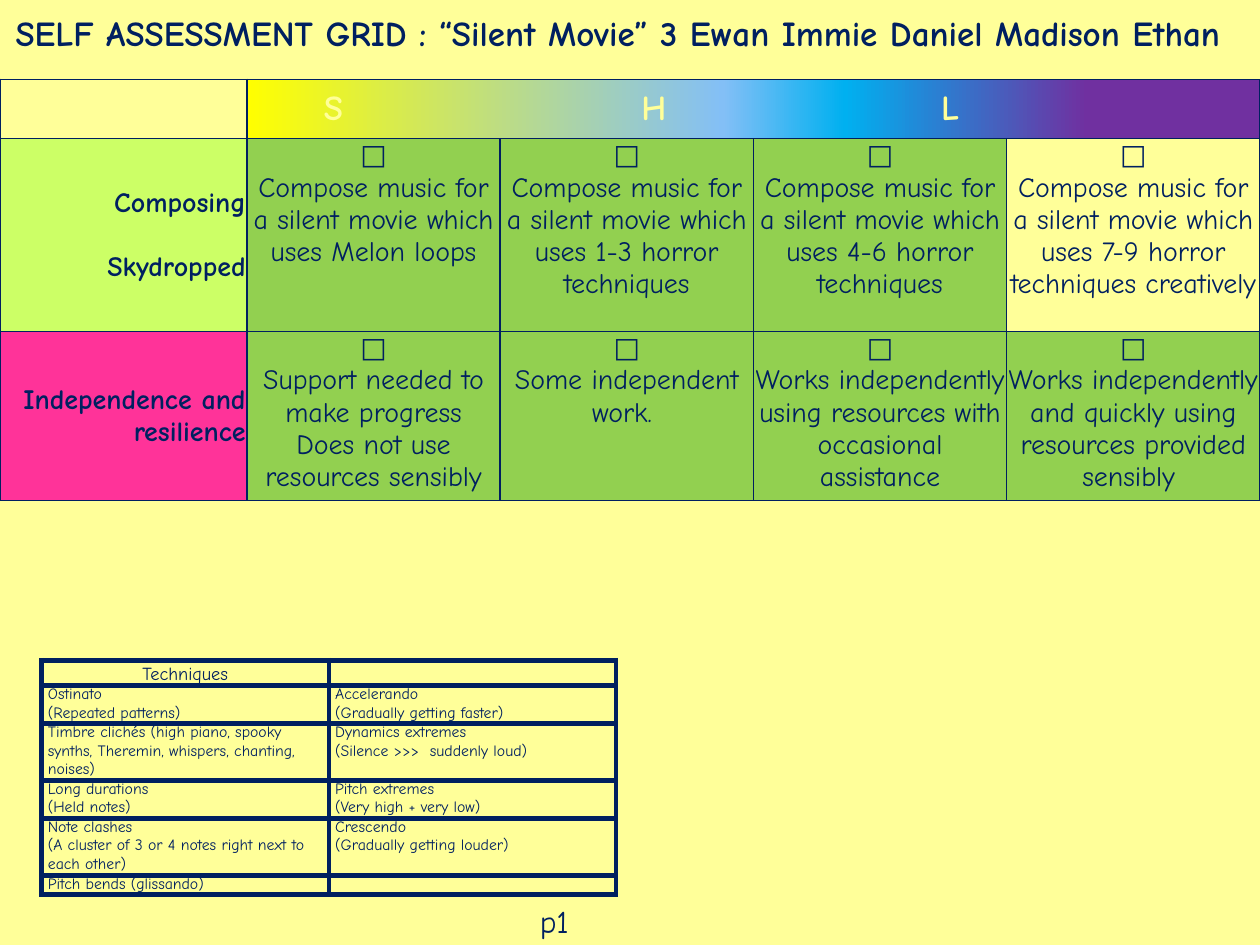
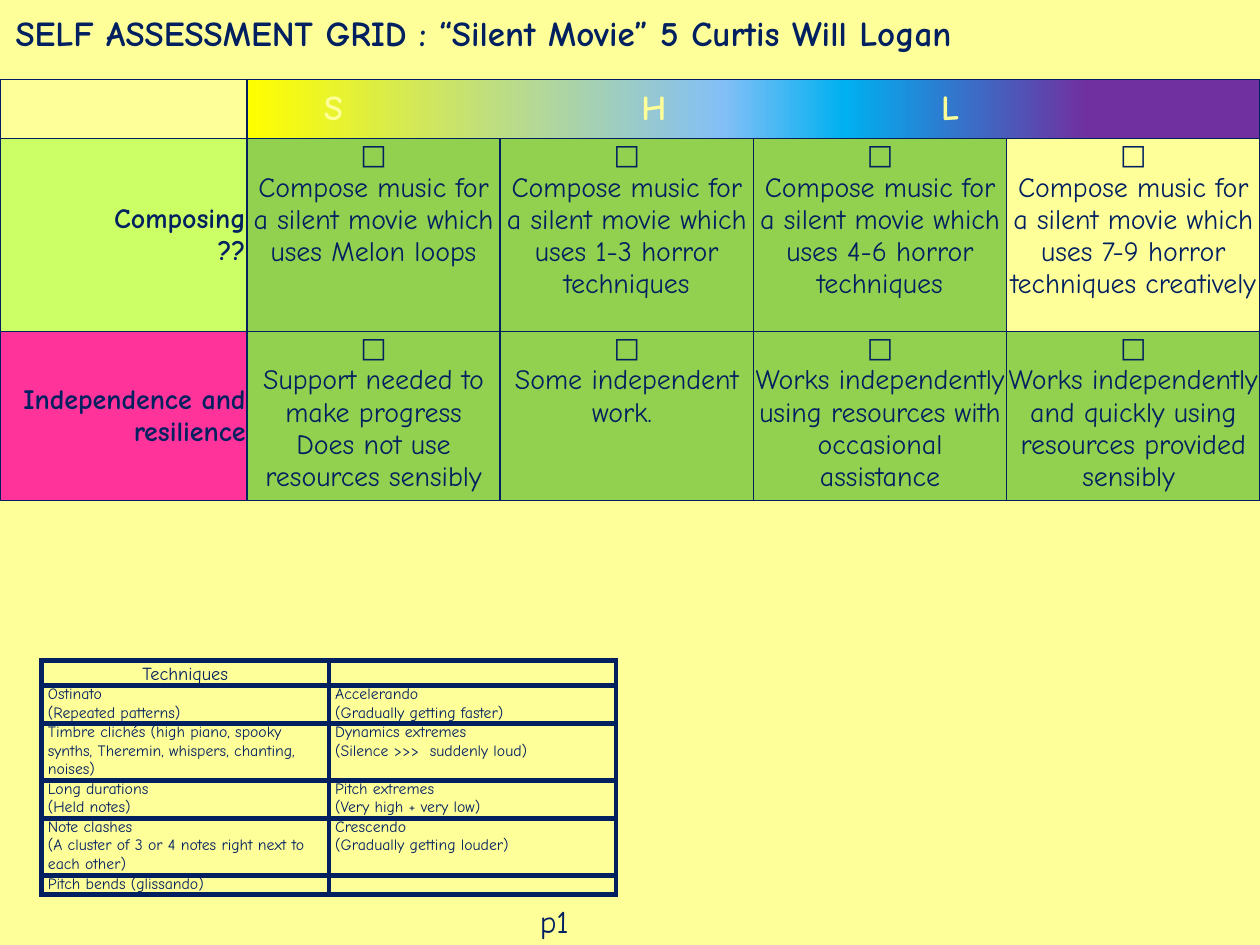
from dataclasses import dataclass

from lxml.etree import SubElement
from pptx import Presentation
from pptx.dml.color import RGBColor
from pptx.enum.shapes import MSO_SHAPE
from pptx.enum.text import MSO_ANCHOR, PP_ALIGN
from pptx.oxml.ns import qn
from pptx.util import Inches, Pt

FONT = "Comic Neue"
COLOURS = {
    "page": "FFFF99",
    "ink": "002060",
    "achieved": "92D050",
    "composing": "CCFF66",
    "independence": "FF3399",
}
LEVEL_GRADIENT = {0: "FFFF00", 47: "83BFF6", 59: "00B0F0", 83: "7030A0"}
LEVEL_TABS = {"S": 0.6, "H": 3.12, "L": 5.5}

COMPOSING_TASKS = [
    "uses Melon loops",
    "uses 1-3 horror techniques",
    "uses 4-6 horror techniques",
    "uses 7-9 horror techniques creatively",
]
INDEPENDENCE_LEVELS = [
    ["Support needed to make progress", "Does not use resources sensibly"],
    ["Some independent work. "],
    ["Works independently using resources with occasional assistance"],
    ["Works independently and quickly using resources provided sensibly "],
]


@dataclass(frozen=True)
class TechniqueRow:
    left: list[str]
    right: list[str]


TECHNIQUES = [
    TechniqueRow(["Ostinato", "(Repeated patterns)"],
                 ["Accelerando", "(Gradually getting faster)"]),
    TechniqueRow(["Timbre clichés (high piano, spooky synths, Theremin, whispers, "
                  "chanting, noises)"],
                 ["Dynamics extremes", "(Silence >>>  suddenly loud)"]),
    TechniqueRow(["Long durations", "(Held notes)"],
                 ["Pitch extremes", "(Very high + very low)"]),
    TechniqueRow(["Note clashes",
                  "(A cluster of 3 or 4 notes right next to each other)"],
                 ["Crescendo", "(Gradually getting louder)"]),
    TechniqueRow(["Pitch bends (glissando)"], []),
]


@dataclass(frozen=True)
class Assessment:
    group: str
    composing_label: list[str]
    label_gap: float = 0


ASSESSMENTS = [
    Assessment("3 Ewan Immie Daniel Madison Ethan", ["Composing", "Skydropped"], 18.5),
    Assessment("5 Curtis Will Logan", ["Composing", "??"]),
]


def write(frame, lines: list[str], *, size: float, bold: bool = False,
          colour: str = COLOURS["ink"], align=PP_ALIGN.LEFT,
          spacing: float = 1.0, gap: float = 0) -> None:
    """Write one paragraph per line, with gap points between paragraphs."""
    if not lines:
        SubElement(frame.paragraphs[0]._p, qn("a:endParaRPr"), sz=str(int(size * 100)))
    for index, line in enumerate(lines):
        para = frame.add_paragraph() if index else frame.paragraphs[0]
        para.alignment = align
        para.line_spacing = spacing
        para.space_before = Pt(gap if index else 0)
        span = para.add_run()
        span.text = line
        span.font.name = FONT
        span.font.size = Pt(size)
        span.font.bold = bold
        span.font.color.rgb = RGBColor.from_string(colour)


def add_colour(parent, colour: str) -> None:
    SubElement(parent, qn("a:srgbClr"), val=colour)


def add_grid(page, left: float, top: float, height: float, widths: list[float],
             row_heights: list[float], border: float, insets: tuple):
    """Add an unfilled table whose rows grow from their least heights to fit the text."""
    frame = page.shapes.add_table(len(row_heights), len(widths), Inches(left),
                                  Inches(top), Inches(sum(widths)), Inches(height))
    grid = frame.table
    grid.first_row = grid.horz_banding = False
    for column, width in zip(grid.columns, widths):
        column.width = Inches(width)
    for row, row_height in zip(grid.rows, row_heights):
        row.height = Inches(row_height)
    frame.height = Inches(height)
    for cell in grid.iter_cells():
        (cell.margin_left, cell.margin_top,
         cell.margin_right, cell.margin_bottom) = map(Inches, insets)
        properties = cell._tc.get_or_add_tcPr()
        for side in ("lnL", "lnR", "lnT", "lnB"):
            line = SubElement(properties, qn(f"a:{side}"), w=str(Pt(border)))
            add_colour(SubElement(line, qn("a:solidFill")), COLOURS["ink"])
        cell.fill.background()
    return grid


def fill_cell(cell, colour: str) -> None:
    cell.fill.solid()
    cell.fill.fore_color.rgb = RGBColor.from_string(colour)


def fill_level_band(cell) -> None:
    cell.fill.gradient()
    cell.fill.gradient_angle = 0
    stops = cell._tc.tcPr.find(qn("a:gradFill")).find(qn("a:gsLst"))
    for stop in list(stops):
        stops.remove(stop)
    for percent, colour in LEVEL_GRADIENT.items():
        add_colour(SubElement(stops, qn("a:gs"), pos=str(percent * 1000)), colour)


def add_level_header(grid) -> None:
    write(grid.cell(0, 0).text_frame, [], size=20)
    band = grid.cell(0, 1)
    band.merge(grid.cell(0, 4))
    fill_level_band(band)
    band.vertical_anchor = MSO_ANCHOR.MIDDLE
    write(band.text_frame, ["".join(f"\t{level}" for level in LEVEL_TABS)],
          size=20, bold=True, colour=COLOURS["page"])
    tabs = SubElement(band.text_frame.paragraphs[0]._p.pPr, qn("a:tabLst"))
    for position in LEVEL_TABS.values():
        SubElement(tabs, qn("a:tab"), pos=str(Inches(position)), algn="l")


def add_criterion(grid, row: int, label: list[str], colour: str,
                  levels: list[list[str]], achieved: int, gap: float = 0) -> None:
    """Fill one row: a label, then tick-box cells, the first few marked achieved."""
    heading = grid.cell(row, 0)
    fill_cell(heading, colour)
    heading.vertical_anchor = MSO_ANCHOR.MIDDLE
    write(heading.text_frame, label, size=16, bold=True, align=PP_ALIGN.RIGHT, gap=gap)
    for column, level in enumerate(levels, start=1):
        cell = grid.cell(row, column)
        write(cell.text_frame, ["□", *level], size=16, align=PP_ALIGN.CENTER)
        if column <= achieved:
            fill_cell(cell, COLOURS["achieved"])


def add_assessment_grid(page, assessment: Assessment) -> None:
    grid = add_grid(page, 0, 0.63, 3.96, [1.96] + [2.01] * 4, [0.47, 1.53, 1.21],
                    border=1, insets=(0.01, 0.01, 0.01, 0))
    add_level_header(grid)
    tasks = [[f"Compose music for a silent movie which {task}"] for task in COMPOSING_TASKS]
    add_criterion(grid, 1, assessment.composing_label, COLOURS["composing"], tasks,
                  achieved=3, gap=assessment.label_gap)
    add_criterion(grid, 2, ["Independence and resilience"], COLOURS["independence"],
                  INDEPENDENCE_LEVELS, achieved=4)


def add_techniques(page) -> None:
    grid = add_grid(page, 0.33, 5.24, 1.84, [2.28, 2.28], [0] * (len(TECHNIQUES) + 1),
                    border=3, insets=(0.05, 0, 0.05, 0))
    heading = grid.cell(0, 0)
    heading.vertical_anchor = MSO_ANCHOR.MIDDLE
    write(heading.text_frame, ["Techniques"], size=10.5,
          align=PP_ALIGN.CENTER, spacing=1.15)
    write(grid.cell(0, 1).text_frame, [], size=9)
    for index, row in enumerate(TECHNIQUES, start=1):
        for column, lines in enumerate((row.left, row.right)):
            write(grid.cell(index, column).text_frame, lines, size=9)


def add_title(page, group: str) -> None:
    box = page.shapes.add_shape(MSO_SHAPE.ROUNDED_RECTANGLE, 0, 0,
                                Inches(10), Inches(0.52))
    box.shadow.inherit = False
    box.fill.background()
    box.line.fill.background()
    box.text_frame.word_wrap = True
    box.text_frame.vertical_anchor = MSO_ANCHOR.MIDDLE
    write(box.text_frame, [f"SELF ASSESSMENT GRID : “Silent Movie” {group}"],
          size=20, bold=True)


def add_page_label(page) -> None:
    box = page.shapes.add_textbox(Inches(3.9), Inches(7.12), Inches(1), Inches(0.38))
    box.text_frame.word_wrap = True
    box.text_frame.vertical_anchor = MSO_ANCHOR.MIDDLE
    write(box.text_frame, ["p1"], size=18, align=PP_ALIGN.CENTER)


def add_assessment_page(deck, assessment: Assessment) -> None:
    page = deck.slides.add_slide(deck.slide_layouts[6])
    page.background.fill.solid()
    page.background.fill.fore_color.rgb = RGBColor.from_string(COLOURS["page"])
    add_title(page, assessment.group)
    add_page_label(page)
    add_techniques(page)
    add_assessment_grid(page, assessment)


def main() -> None:
    deck = Presentation()
    deck.slide_width, deck.slide_height = Inches(10), Inches(7.5)
    for assessment in ASSESSMENTS:
        add_assessment_page(deck, assessment)
    deck.save("out.pptx")


if __name__ == "__main__":
    main()
